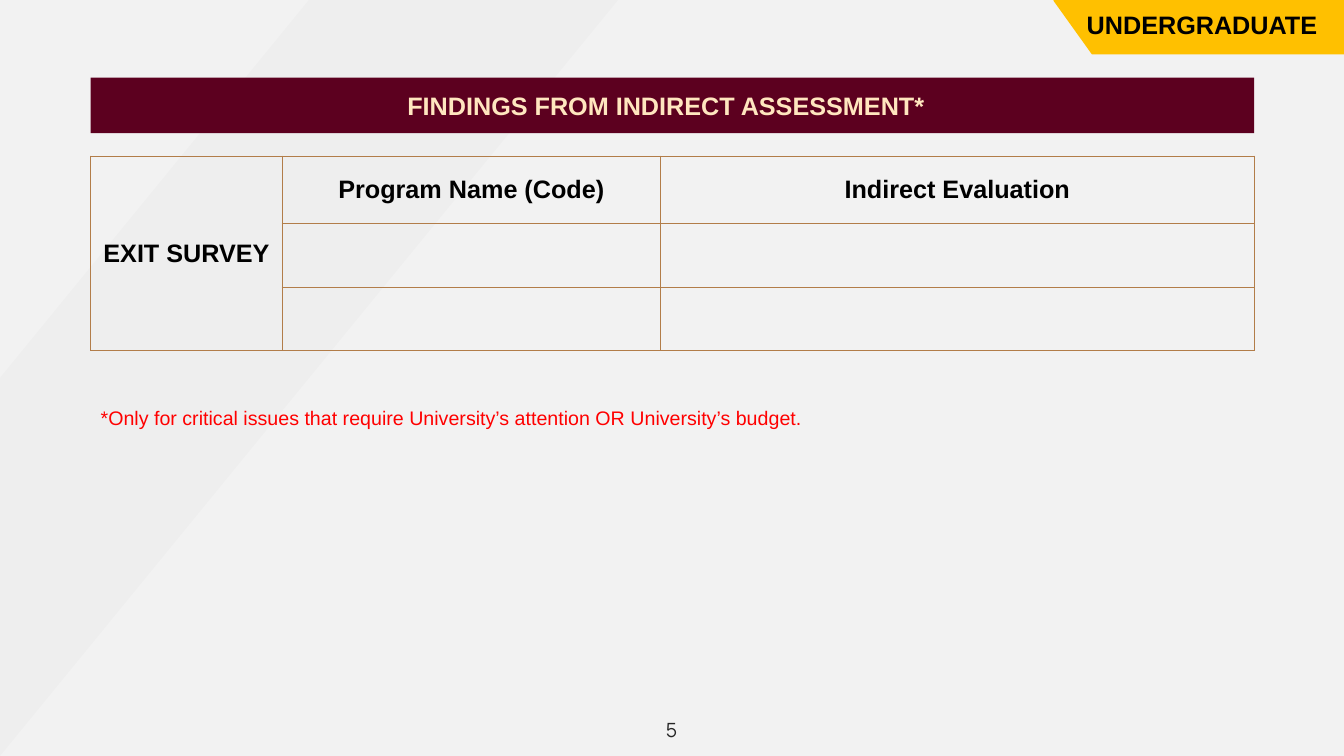
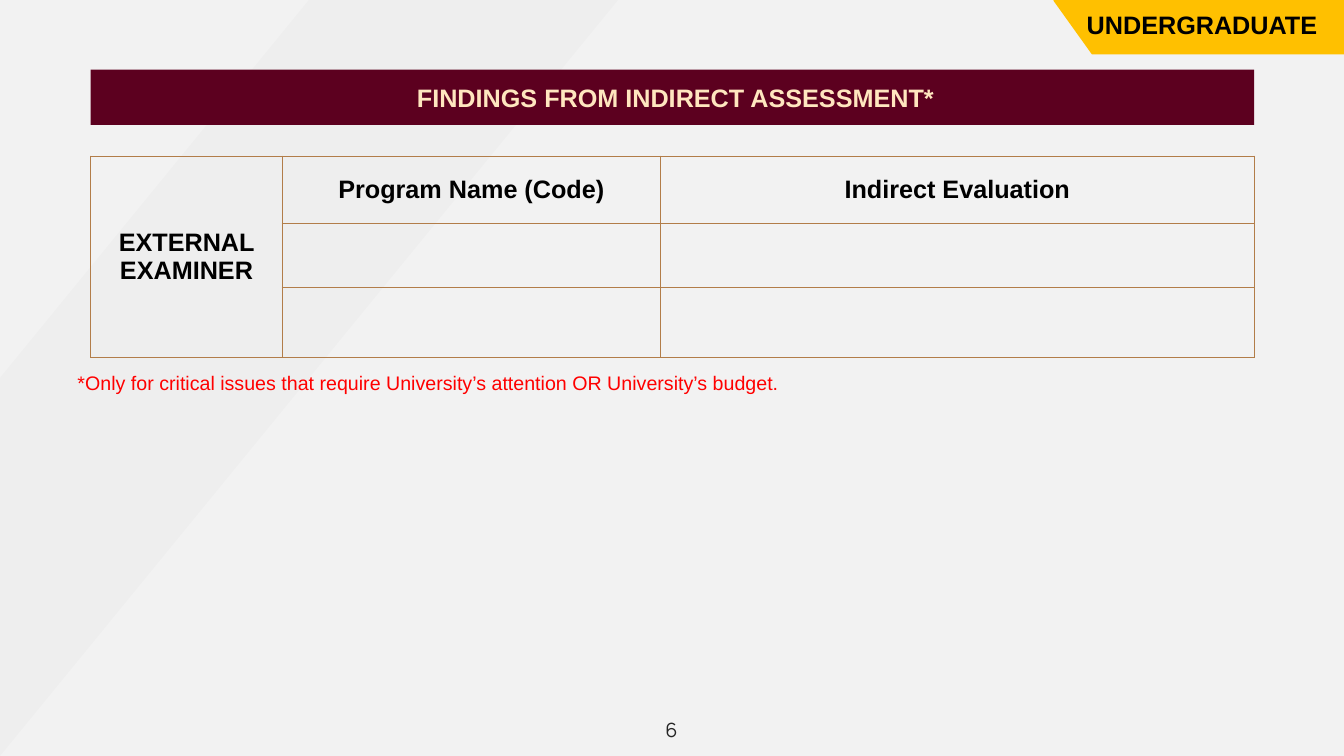
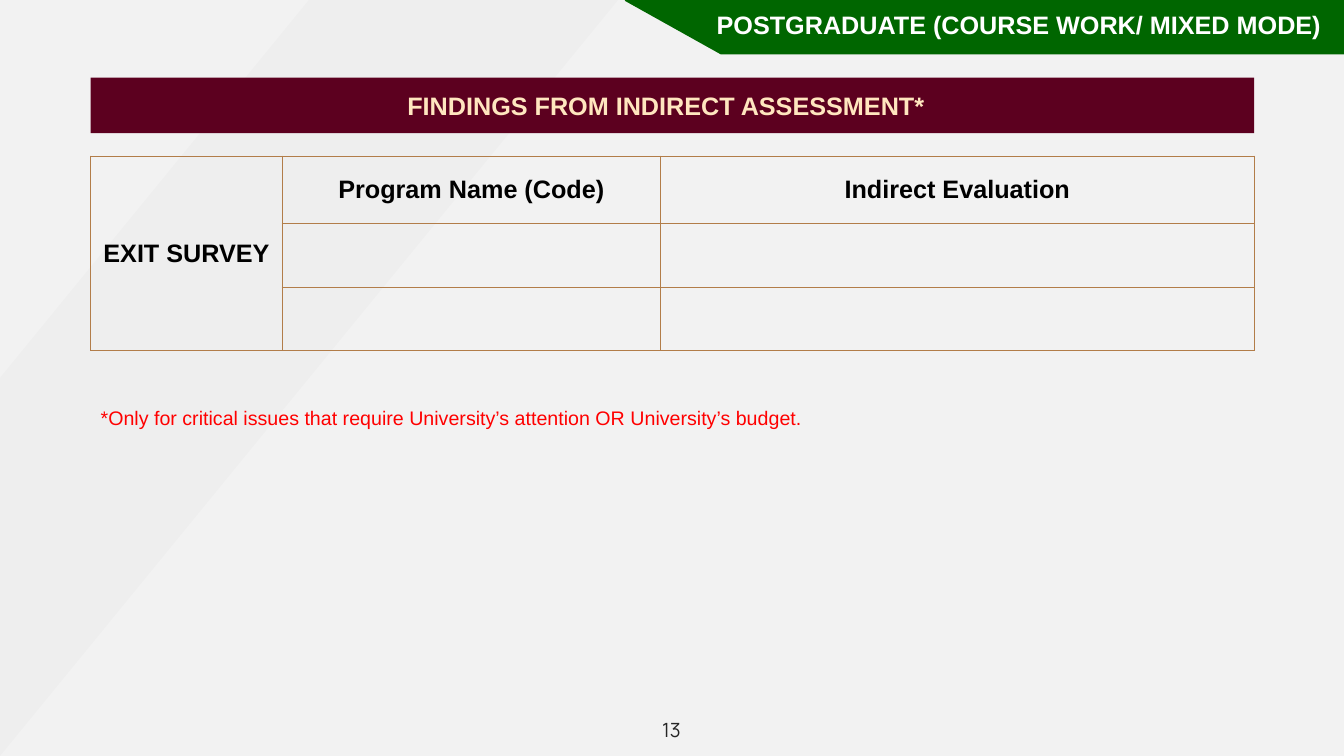
from pptx import Presentation
from pptx.dml.color import RGBColor
from pptx.enum.shapes import MSO_SHAPE
from pptx.enum.text import MSO_ANCHOR, MSO_AUTO_SIZE, PP_ALIGN
from pptx.oxml.ns import qn
from pptx.util import Inches, Pt
from lxml import etree

RECTANGLE = MSO_SHAPE.RECTANGLE
STRIPE = MSO_SHAPE.DIAGONAL_STRIPE
LEFT, CENTER = PP_ALIGN.LEFT, PP_ALIGN.CENTER
TOP, MIDDLE = MSO_ANCHOR.TOP, MSO_ANCHOR.MIDDLE
GROW, FIXED = MSO_AUTO_SIZE.SHAPE_TO_FIT_TEXT, MSO_AUTO_SIZE.NONE

COLORS = {
    "background": "F2F2F2",
    "stripe": "BFBFBF",
    "band": "5C001F",
    "title": "FFE6BF",
    "border": "B27D49",
    "note": "FF0000",
    "yellow": "FFC000",
    "green": "006600",
    "black": "000000",
    "white": "FFFFFF",
    "number": "262626",
}
SLIDE_WIDTH, SLIDE_HEIGHT = 13.33, 7.5
CONTENT_LEFT, CONTENT_WIDTH = 0.9, 11.54
TABLE_TOP = 1.55
COLUMN_WIDTHS = (1.9, 3.75, 5.89)
ROW_HEIGHTS = (0.67, 0.63, 0.63)
RIBBON_TOP, RIBBON_BOTTOM = -0.03, 0.54
TITLE = "FINDINGS FROM INDIRECT ASSESSMENT*"
NOTE = "*Only for critical issues that require University’s attention OR University’s budget."

UNDERGRADUATE = dict(text="UNDERGRADUATE", fill="yellow", color="black",
                     left=10.44, foot=10.83, text_left=10.68)
POSTGRADUATE = dict(text="POSTGRADUATE (COURSE WORK/ MIXED MODE)", fill="green", color="white",
                    left=6.19, foot=7.15, text_left=7.01)
EXIT_SURVEY = dict(source="EXIT SURVEY", band_top=0.77,
                   title_box=(1.66, 9.89), note_box=(0.9, 3.98, 9.26))
EXTERNAL_EXAMINER = dict(source="EXTERNAL EXAMINER", band_top=0.69,
                         title_box=(2.14, 9.12), note_box=(0.67, 3.63, 7.78))
SLIDES = (
    dict(number=5, ribbon=UNDERGRADUATE, **EXIT_SURVEY),
    dict(number=6, ribbon=UNDERGRADUATE, **EXTERNAL_EXAMINER),
    dict(number=13, ribbon=POSTGRADUATE, **EXIT_SURVEY),
)


def rgb(name):
    return RGBColor.from_string(COLORS[name])


def write_text(frame, text, size=18, font="Arial", color="black", bold=False, align=LEFT):
    paragraph = frame.paragraphs[0]
    paragraph.alignment = align
    run = paragraph.add_run()
    run.text = text
    run.font.size = Pt(size)
    run.font.name = font
    run.font.bold = bold
    run.font.color.rgb = rgb(color)


def add_text(shapes, box, text, anchor=TOP, auto_size=GROW, **text_format):
    frame = shapes.add_textbox(*map(Inches, box)).text_frame
    frame.word_wrap = True
    frame.auto_size = auto_size
    frame.vertical_anchor = anchor
    write_text(frame, text, **text_format)


def paint(shape, color):
    shape.shadow.inherit = False
    shape.fill.solid()
    shape.fill.fore_color.rgb = rgb(color)
    shape.line.fill.background()


def add_preset(shapes, kind, box, color):
    shape = shapes.add_shape(kind, *map(Inches, box))
    paint(shape, color)
    return shape


def add_stripe(shapes):
    stripe = add_preset(shapes, STRIPE, (0, 0, 6.13, SLIDE_HEIGHT), "stripe")
    color = stripe.fill._xPr.find(qn("a:solidFill"))[0]
    etree.SubElement(color, qn("a:alpha"), val="8000")


def add_title(shapes, band_top, left, width):
    add_preset(shapes, RECTANGLE, (CONTENT_LEFT, band_top, CONTENT_WIDTH, 0.55), "band")
    add_text(shapes, (left, band_top + 0.08, width, 0.4), TITLE,
             color="title", bold=True, align=CENTER)


def add_ribbon(shapes, text, fill, color, left, foot, text_left):
    group = shapes.add_group_shape().shapes
    corners = ((foot, RIBBON_BOTTOM), (left + 0.01, 0.01), (left, RIBBON_TOP),
               (SLIDE_WIDTH, RIBBON_TOP))
    builder = group.build_freeform(Inches(SLIDE_WIDTH), Inches(RIBBON_BOTTOM))
    builder.add_line_segments([(Inches(x), Inches(y)) for x, y in corners], close=True)
    paint(builder.convert_to_shape(), fill)
    add_text(group, (text_left, 0.04, SLIDE_WIDTH - text_left, 0.4), text,
             color=color, bold=True)


def format_cell(cell):
    properties = cell._tc.get_or_add_tcPr()
    for side in ("a:lnL", "a:lnR", "a:lnT", "a:lnB"):
        line = etree.SubElement(properties, qn(side), w=str(Pt(1)))
        fill = etree.SubElement(line, qn("a:solidFill"))
        etree.SubElement(fill, qn("a:srgbClr"), val=COLORS["border"])
    cell.fill.background()
    cell.vertical_anchor = MIDDLE


def add_findings_table(shapes, source):
    frame = shapes.add_table(len(ROW_HEIGHTS), len(COLUMN_WIDTHS), Inches(CONTENT_LEFT),
                             Inches(TABLE_TOP), Inches(CONTENT_WIDTH), Inches(sum(ROW_HEIGHTS)))
    table = frame.table
    table.first_row = table.horz_banding = False
    for column, width in zip(table.columns, COLUMN_WIDTHS):
        column.width = Inches(width)
    for row, height in zip(table.rows, ROW_HEIGHTS):
        row.height = Inches(height)
    for cell in table.iter_cells():
        format_cell(cell)
    table.cell(0, 0).merge(table.cell(len(ROW_HEIGHTS) - 1, 0))
    headings = (source, "Program Name (Code)", "Indirect Evaluation")
    for index, heading in enumerate(headings):
        write_text(table.cell(0, index).text_frame, heading, bold=True, align=CENTER)


def add_findings_slide(presentation, number, ribbon, source, band_top, title_box, note_box):
    slide = presentation.slides.add_slide(presentation.slide_layouts[6])
    shapes = slide.shapes
    add_stripe(shapes)
    add_title(shapes, band_top, *title_box)
    add_findings_table(shapes, source)
    add_text(shapes, (*note_box, 0.34), NOTE, size=14, color="note")
    add_ribbon(shapes, **ribbon)
    add_text(shapes, (5.16, 7.04, 3, 0.4), str(number), anchor=MIDDLE, auto_size=FIXED,
             size=14, font="Manrope", color="number", align=CENTER)


def main():
    presentation = Presentation()
    presentation.slide_width = Inches(SLIDE_WIDTH)
    presentation.slide_height = Inches(SLIDE_HEIGHT)
    background = presentation.slide_master.background.fill
    background.solid()
    background.fore_color.rgb = rgb("background")
    for content in SLIDES:
        add_findings_slide(presentation, **content)
    presentation.save("out.pptx")


if __name__ == "__main__":
    main()
